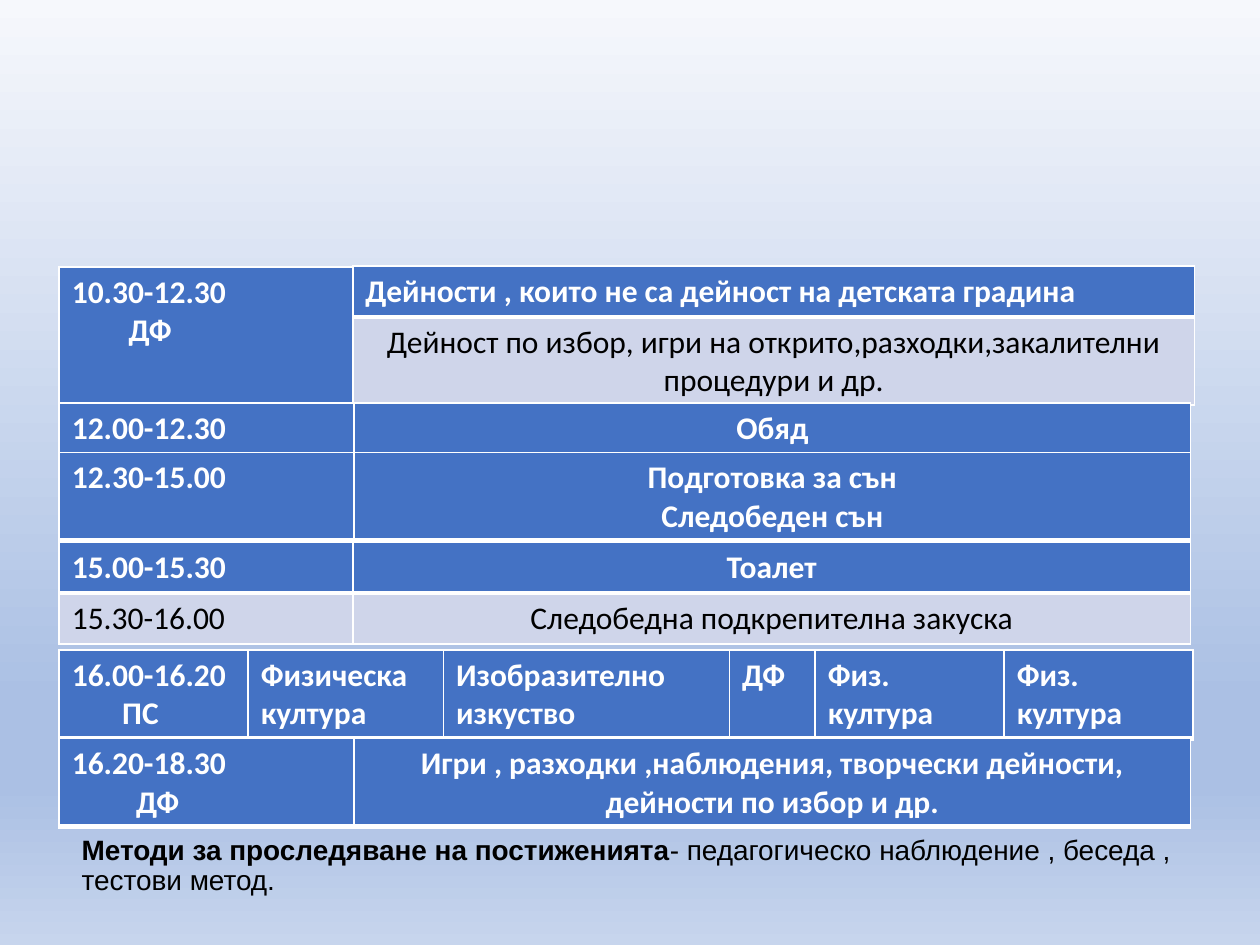
"""Build the kindergarten daily schedule slide from stacked timetable strips."""
from copy import deepcopy

from lxml.etree import SubElement
from pptx import Presentation
from pptx.dml.color import RGBColor
from pptx.enum.text import MSO_ANCHOR as Anchor, PP_ALIGN as Align
from pptx.oxml.ns import qn
from pptx.util import Inches, Pt

WHITE = RGBColor(0xFF, 0xFF, 0xFF)
BLACK = RGBColor(0x00, 0x00, 0x00)
BLUE = RGBColor(0x44, 0x72, 0xC4)
PALE = RGBColor(0xCF, 0xD5, 0xEA)
SKY = [
    (0, RGBColor(0xF6, 0xF8, 0xFC)),
    (0.74, RGBColor(0xAB, 0xC0, 0xE4)),
    (0.83, RGBColor(0xAB, 0xC0, 0xE4)),
    (1, RGBColor(0xC7, 0xD5, 0xED)),
]
COLUMNS, ROWS = 100, 75
LEFT, STRIP_ROW = 4.7, 4.06
HOURS_AND_ACTIVITY = [23.4, 66.4]

deck = Presentation()
deck.slide_width, deck.slide_height = Inches(10), Inches(7.5)
column, row = deck.slide_width / COLUMNS, deck.slide_height / ROWS
slide = deck.slides.add_slide(deck.slide_layouts[6])


def place(left, top, width, height):
    return int(left * column), int(top * row), int(width * column), int(height * row)


def add_borders(cell, bottom_width):
    properties = cell._tc.get_or_add_tcPr()
    for side, points in (("L", 1), ("R", 1), ("T", 1), ("B", bottom_width)):
        line = SubElement(properties, qn(f"a:ln{side}"), w=str(Pt(points)))
        paint = SubElement(line, qn("a:solidFill"))
        SubElement(paint, qn("a:srgbClr"), val=str(WHITE))


sky = slide.background.fill
sky.gradient()
sky.gradient_angle = 270
stop_list = slide.element.find(f".//{qn('a:gsLst')}")
for _ in range(len(SKY) - len(stop_list)):
    stop_list.append(deepcopy(stop_list[0]))
for stop, (position, color) in zip(sky.gradient_stops, SKY):
    stop.position = position
    stop.color.rgb = color

methods = slide.shapes.add_textbox(*place(5.5, 66.4, 90, 4.7)).text_frame
methods.word_wrap = True
methods.vertical_anchor = Anchor.MIDDLE
methods_line = methods.paragraphs[0]
methods_line.line_spacing = 0.9
for wording, bold in (
    ("Методи за проследяване на постиженията", True),
    ("- педагогическо наблюдение , беседа , тестови метод.", False),
):
    run = methods_line.add_run()
    run.text = wording
    run.font.name, run.font.size, run.font.bold = "Arial", Pt(16), bold
    run.font.color.rgb = BLACK

strips = [
    (LEFT, 21.2, [23.4], 10.9, 4.5, [["10.30-12.30\nДФ"]]),
    (28, 21.1, [66.8], STRIP_ROW, 0, [
        ["Дейности , които не са дейност на детската градина"],
        ["Дейност по избор, игри на открито,разходки,закалителни процедури и др."],
    ]),
    (LEFT, 32, HOURS_AND_ACTIVITY, STRIP_ROW, 0, [["12.00-12.30", "Обяд"]]),
    (LEFT, 35.9, HOURS_AND_ACTIVITY, STRIP_ROW, 0, [
        ["12.30-15.00", "Подготовка за сън\nСледобеден сън"],
    ]),
    (LEFT, 43, [23.3, 66.5], STRIP_ROW, 0, [
        ["15.00-15.30", "Тоалет"],
        ["15.30-16.00", "Следобедна подкрепителна закуска"],
    ]),
    (LEFT, 51.6, [15, 15.5, 22.7, 6.8, 15, 15], STRIP_ROW, 4, [
        ["16.00-16.20\nПС", "Физическа\nкултура", "Изобразително изкуство",
         "ДФ", "Физ. култура", "Физ. култура"],
    ]),
    (LEFT, 58.6, HOURS_AND_ACTIVITY, STRIP_ROW, 5.1, [
        ["16.20-18.30\nДФ",
         "Игри , разходки ,наблюдения, творчески дейности, дейности по избор и др."],
    ]),
]

for left, top, widths, height, group_indent, entries in strips:
    frame = place(left, top, sum(widths), height * len(entries))
    timetable = slide.shapes.add_table(len(entries), len(widths), *frame).table
    for table_column, width in zip(timetable.columns, widths):
        table_column.width = int(width * column)
    for r, entry in enumerate(entries):
        for c, wording in enumerate(entry):
            cell = timetable.cell(r, c)
            add_borders(cell, 1 if r else 3)
            cell.fill.solid()
            cell.fill.fore_color.rgb = PALE if r else BLUE
            cell.text_frame.text = wording
            centred = widths[c] > COLUMNS / 2 and (r or c)
            for i, paragraph in enumerate(cell.text_frame.paragraphs):
                paragraph.alignment = Align.CENTER if centred else Align.LEFT
                if i and c == 0:
                    paragraph._p.get_or_add_pPr().set("marL", str(int(group_indent * column)))
                font = paragraph.runs[0].font
                font.name, font.size, font.bold = "Calibri", Pt(18), r == 0
                font.color.rgb = BLACK if r else WHITE

deck.save("out.pptx")
